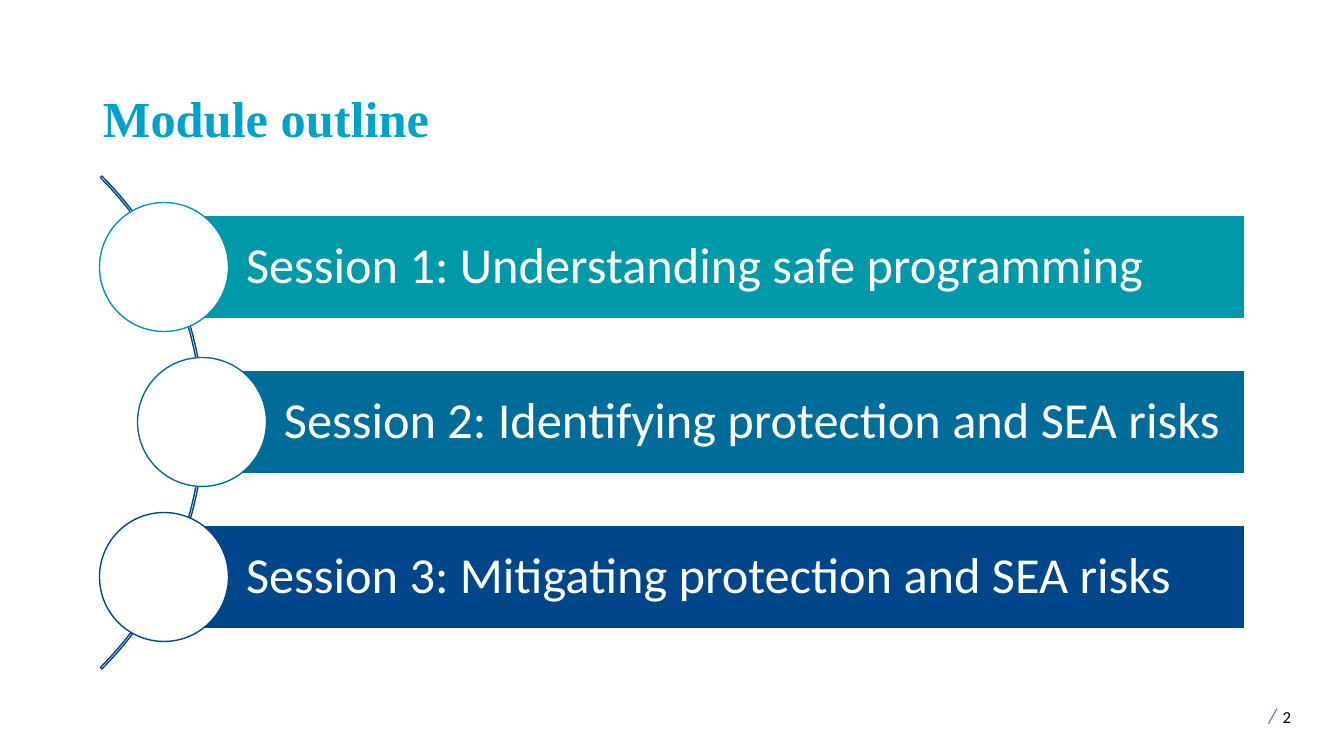
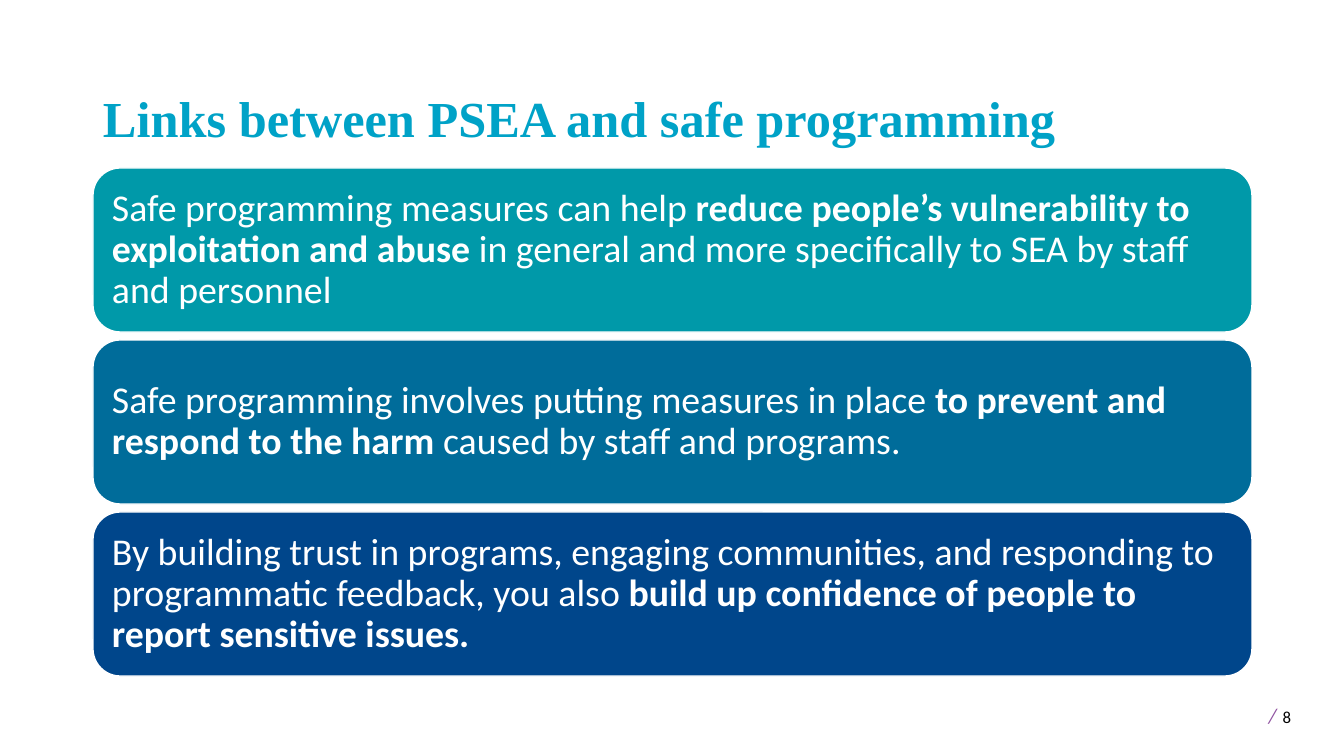
from pptx import Presentation
from pptx.dml.color import RGBColor
from pptx.enum.shapes import MSO_SHAPE
from pptx.enum.text import MSO_ANCHOR, MSO_AUTO_SIZE, PP_ALIGN
from pptx.util import Pt

RECTANGLE = MSO_SHAPE.RECTANGLE
ROUNDED = MSO_SHAPE.ROUNDED_RECTANGLE
OVAL = MSO_SHAPE.OVAL
BLOCK_ARC = MSO_SHAPE.BLOCK_ARC
TOP, MIDDLE, BOTTOM = MSO_ANCHOR.TOP, MSO_ANCHOR.MIDDLE, MSO_ANCHOR.BOTTOM
LEFT = PP_ALIGN.LEFT
NO_AUTOFIT = MSO_AUTO_SIZE.NONE

COLORS = {
    "white": "FFFFFF",
    "black": "000000",
    "title": "00A2C7",
    "slash": "9053A1",
    "teal": "0099A9",
    "blue": "006C9A",
    "navy": "00468B",
}
ROW_COLORS = ["teal", "blue", "navy"]

TITLE_FONT = {"name": "Times New Roman", "size": Pt(36), "bold": True}
SESSION_FONT = {"name": "Calibri", "size": Pt(36), "bold": False}
CARD_FONT = {"name": "Calibri", "size": Pt(27)}
NUMBER_FONT = {"name": "Calibri"}

OUTLINE = {
    "title": "Module outline",
    "number": "2",
    "sessions": [
        "Session 1: Understanding safe programming",
        "Session 2: Identifying protection and SEA risks",
        "Session 3: Mitigating protection and SEA risks",
    ],
}
LINKS = {
    "title": "Links between PSEA and safe programming",
    "number": "8",
    "cards": [
        [
            ("Safe programming measures can help ", False),
            ("reduce people’s vulnerability to exploitation and abuse ", True),
            ("in general and more specifically to SEA by staff and personnel", False),
        ],
        [
            ("Safe programming involves putting measures in place ", False),
            ("to prevent and respond to the harm ", True),
            ("caused by staff and programs.", False),
        ],
        [
            ("By building trust in programs, engaging communities, and responding to "
             "programmatic feedback, you also ", False),
            ("build up confidence of people to report sensitive issues.", True),
        ],
    ],
}

EMU_PER_PX = 12192000 / 1344
PAGE_SIZE = (1344, 756)
TITLE_BOX = (93, 39, 1159, 114)
NUMBER_BOX = (1253, 693, 88, 40)
BAR_LEFTS = [164, 202, 164]
BAR_TOP, BAR_STEP, BAR_HEIGHT, BAR_RIGHT = 215, 155, 104, 1245
CIRCLE = 129
ARC_BOX = (-493, 74, 697, 697)
ARC_ADJUSTMENTS = [189, 27, 0.0031]
CARD_LEFT, CARD_TOP, CARD_WIDTH, CARD_HEIGHT, CARD_GAP = 93, 168, 1159, 164, 8


def px(value):
    return round(value * EMU_PER_PX)


def rgb(name):
    return RGBColor.from_string(COLORS[name])


def apply(target, values):
    for name, value in values.items():
        setattr(target, name, value)


def set_frame(shape, anchor, insets):
    frame = shape.text_frame
    left, top, right, bottom = map(px, insets)
    apply(frame, {
        "word_wrap": True, "auto_size": NO_AUTOFIT, "vertical_anchor": anchor,
        "margin_left": left, "margin_top": top,
        "margin_right": right, "margin_bottom": bottom,
    })
    para = frame.paragraphs[0]
    para.alignment = LEFT
    return para


def add_span(para, text, color, font):
    span = para.add_run()
    span.text = text
    apply(span.font, font)
    span.font.color.rgb = rgb(color)


def add_block(page, kind, box, fill, line):
    shape = page.shapes.add_shape(kind, *map(px, box))
    shape.shadow.inherit = False
    if fill:
        shape.fill.solid()
        shape.fill.fore_color.rgb = rgb(fill)
    else:
        shape.fill.background()
    shape.line.color.rgb = rgb(line)
    shape.line.width = Pt(1)
    return shape


def add_page(deck, content):
    page = deck.slides.add_slide(deck.slide_layouts[5])
    title = page.shapes.title
    apply(title, dict(zip(("left", "top", "width", "height"), map(px, TITLE_BOX))))
    para = set_frame(title, BOTTOM, (10, 5, 10, 5))
    para.line_spacing = 0.9
    add_span(para, content["title"], "title", TITLE_FONT)

    number = page.shapes.add_textbox(*map(px, NUMBER_BOX))
    para = set_frame(number, TOP, (10, 5, 10, 5))
    for text, color, size, italic in [
        (" ", "black", 18, False),
        ("/", "slash", 15, True),
        (" ", "black", 18, False),
        (content["number"], "black", 12, False),
    ]:
        add_span(para, text, color, {**NUMBER_FONT, "size": Pt(size), "italic": italic})
    return page


def build_outline(deck):
    page = add_page(deck, OUTLINE)
    arc = add_block(page, BLOCK_ARC, ARC_BOX, None, "navy")
    for index, value in enumerate(ARC_ADJUSTMENTS):
        arc.adjustments[index] = value
    rows = zip(OUTLINE["sessions"], BAR_LEFTS, ROW_COLORS)
    for index, (session, left, color) in enumerate(rows):
        top = BAR_TOP + index * BAR_STEP
        box = (left, top, BAR_RIGHT - left, BAR_HEIGHT)
        bar = add_block(page, RECTANGLE, box, color, "white")
        para = set_frame(bar, MIDDLE, (82, 10, 10, 10))
        para.line_spacing = 0.9
        add_span(para, session, "white", SESSION_FONT)
        circle_top = top + (BAR_HEIGHT - CIRCLE) / 2
        circle_box = (left - CIRCLE / 2, circle_top, CIRCLE, CIRCLE)
        add_block(page, OVAL, circle_box, "white", color)


def build_links(deck):
    page = add_page(deck, LINKS)
    for index, (spans, color) in enumerate(zip(LINKS["cards"], ROW_COLORS)):
        top = CARD_TOP + index * (CARD_HEIGHT + CARD_GAP)
        box = (CARD_LEFT, top, CARD_WIDTH, CARD_HEIGHT)
        card = add_block(page, ROUNDED, box, color, "white")
        para = set_frame(card, MIDDLE, (11, 11, 11, 11))
        para.line_spacing = 0.9
        for text, bold in spans:
            add_span(para, text, "white", {**CARD_FONT, "bold": bold})


def main():
    deck = Presentation()
    deck.slide_width, deck.slide_height = map(px, PAGE_SIZE)
    build_outline(deck)
    build_links(deck)
    deck.save("out.pptx")


if __name__ == "__main__":
    main()
